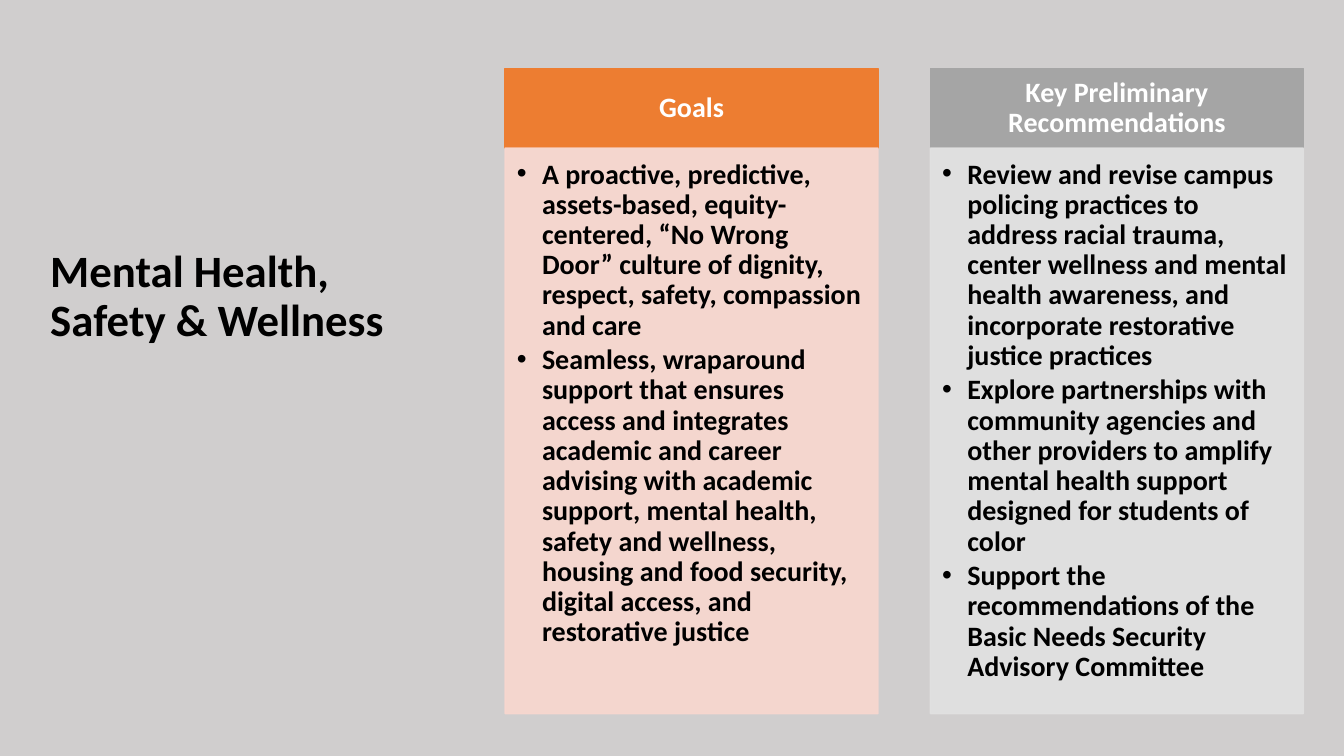
from lxml import etree
from pptx import Presentation
from pptx.dml.color import RGBColor
from pptx.enum import shapes, text
from pptx.oxml.ns import qn
from pptx.util import Pt

FONT = "Calibri"
COLUMN_LEFT, COLUMN_STEP, COLUMN_WIDTH = 360.8, 303.8, 266.4
HEADER_TOP, HEADER_HEIGHT, BODY_HEIGHT = 49, 56.8, 404

COLUMNS = [
    ("Goals", "ED7D31", "F8D7CE", [
        "A proactive, predictive, assets-based, equity-centered, “No Wrong Door” "
        "culture of dignity, respect, safety, compassion and care",
        "Seamless, wraparound support that ensures access and integrates academic "
        "and career advising with academic support, mental health, safety and "
        "wellness, housing and food security, digital access, and restorative justice",
    ]),
    ("Key Preliminary Recommendations", "A5A5A5", "E1E1E1", [
        "Review and revise campus policing practices to address racial trauma, "
        "center wellness and mental health awareness, and incorporate restorative "
        "justice practices",
        "Explore partnerships with community agencies and other providers to "
        "amplify mental health support designed for students of color",
        "Support the recommendations of the Basic Needs Security Advisory Committee",
    ]),
]


def color(value):
    return RGBColor.from_string(value)


def write(box, content, size, ink, anchor, align, margins, space_after=0):
    """Fill a shape with bold text, one paragraph per line of content."""
    frame = box.text_frame
    frame.word_wrap = True
    frame.vertical_anchor = anchor
    (frame.margin_left, frame.margin_top,
     frame.margin_right, frame.margin_bottom) = [Pt(m) for m in margins]
    frame.text = content
    for para in frame.paragraphs:
        para.alignment = align
        para.line_spacing = 0.9
        para.space_after = Pt(space_after)
        for span in para.runs:
            span.font.name = FONT
            span.font.size = Pt(size)
            span.font.bold = True
            span.font.color.rgb = color(ink)


def add_bullets(box, indent):
    for para in box.text_frame.paragraphs:
        props = para._p.get_or_add_pPr()
        props.set("marL", str(Pt(indent)))
        props.set("indent", str(-Pt(indent)))
        etree.SubElement(props, qn("a:buFont"), typeface="Arial")
        etree.SubElement(props, qn("a:buChar"), char="•")


def set_opacity(box, percent):
    for tone in box._element.spPr.iter(qn("a:srgbClr")):
        etree.SubElement(tone, qn("a:alpha"), val=str(percent * 1000))


def add_panel(page, left, top, height, tint):
    box = page.shapes.add_shape(shapes.MSO_SHAPE.RECTANGLE, Pt(left), Pt(top),
                                Pt(COLUMN_WIDTH), Pt(height))
    box.shadow.inherit = False
    box.fill.solid()
    box.fill.fore_color.rgb = color(tint)
    box.line.color.rgb = color(tint)
    box.line.width = Pt(1)
    return box


def add_column(page, left, heading, header_tint, body_tint, points):
    header = add_panel(page, left, HEADER_TOP, HEADER_HEIGHT, header_tint)
    write(header, heading, 20, "FFFFFF", text.MSO_ANCHOR.MIDDLE,
          text.PP_ALIGN.CENTER, (11.2, 6.4, 11.2, 6.4))
    body = add_panel(page, left, HEADER_TOP + HEADER_HEIGHT, BODY_HEIGHT, body_tint)
    set_opacity(body, 90)
    write(body, "\n".join(points), 20, "000000", text.MSO_ANCHOR.TOP,
          text.PP_ALIGN.LEFT, (8.4, 8.4, 11.2, 12.6), space_after=3)
    add_bullets(body, 18)


def add_title(page, content):
    box = page.shapes.add_textbox(Pt(28.8), Pt(36), Pt(347), Pt(214.6))
    write(box, content, 32, "000000", text.MSO_ANCHOR.BOTTOM,
          text.PP_ALIGN.LEFT, (7.2, 3.6, 7.2, 3.6))


def main():
    deck = Presentation()
    deck.slide_width, deck.slide_height = Pt(960), Pt(540)
    page = deck.slides.add_slide(deck.slide_layouts[6])
    page.background.fill.solid()
    page.background.fill.fore_color.rgb = color("D0CECE")
    add_title(page, "Mental Health, \vSafety & Wellness")
    for index, column in enumerate(COLUMNS):
        add_column(page, COLUMN_LEFT + index * COLUMN_STEP, *column)
    deck.save("out.pptx")


if __name__ == "__main__":
    main()
